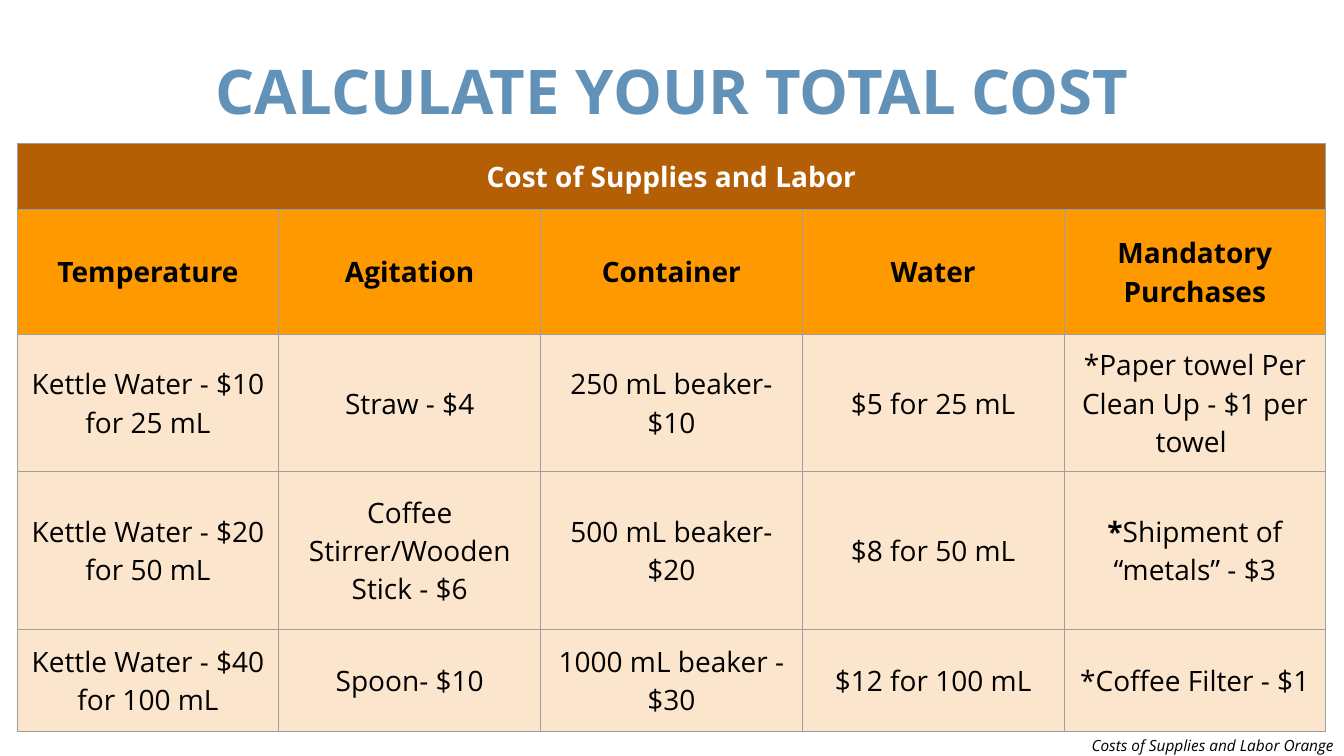
from lxml.etree import SubElement
from pptx import Presentation
from pptx.dml.color import RGBColor
from pptx.enum.shapes import MSO_SHAPE
from pptx.enum.text import MSO_ANCHOR, PP_ALIGN
from pptx.oxml.ns import qn
from pptx.util import Inches, Pt

FONT = "Open Sans"
TITLE = "CALCULATE YOUR TOTAL COST"
TABLE_HEADING = "Cost of Supplies and Labor"
CAPTION = "Costs of Supplies and Labor Orange"
HEADERS = ["Temperature", "Agitation", "Container", "Water", "Mandatory Purchases"]
COSTS = [
    ["Kettle Water - $10 for 25 mL", "Straw - $4", "250 mL beaker- $10",
     "$5 for 25 mL", "*Paper towel Per Clean Up - $1 per towel "],
    ["Kettle Water - $20 for 50 mL", "Coffee Stirrer/Wooden Stick - $6",
     "500 mL beaker- $20", "$8 for 50 mL",
     [("*", True), ("Shipment of “metals” - $3", False)]],
    ["Kettle Water - $40 for 100 mL", "Spoon- $10", "1000 mL beaker - $30",
     "$12 for 100 mL", "*Coffee Filter - $1"],
]
ROW_HEIGHTS = [0.66, 1.24, 1.36, 1.57, 1.01]
TABLE_LEFT, TABLE_TOP, TABLE_WIDTH = 0.17, 1.42, 12.98
CELL_MARGIN = Inches(0.09)
BORDER = "9E9E9E"


def color(value):
    return RGBColor.from_string(value)


def add_run(para, text, size, ink, bold=False, italic=False):
    span = para.add_run()
    span.text = text
    font = span.font
    font.name, font.size, font.bold, font.italic = FONT, Pt(size), bold, italic
    font.color.rgb = color(ink)


def add_borders(cell):
    """Draw the four edges; they must precede the fill in the cell properties."""
    properties = cell._tc.get_or_add_tcPr()
    for edge in ("a:lnL", "a:lnR", "a:lnT", "a:lnB"):
        line = SubElement(properties, qn(edge), w=str(Pt(0.75)))
        fill = SubElement(line, qn("a:solidFill"))
        SubElement(fill, qn("a:srgbClr"), val=BORDER)


def format_cell(cell, fill, content="", ink="000000", bold=False):
    add_borders(cell)
    cell.fill.solid()
    cell.fill.fore_color.rgb = color(fill)
    cell.vertical_anchor = MSO_ANCHOR.MIDDLE
    cell.margin_left = cell.margin_right = CELL_MARGIN
    cell.margin_top = cell.margin_bottom = CELL_MARGIN
    para = cell.text_frame.paragraphs[0]
    para.alignment = PP_ALIGN.CENTER
    runs = [(content, bold)] if isinstance(content, str) else content
    for text, weight in runs:
        if text:
            add_run(para, text, 20, ink, weight)


def add_title(page):
    title = page.shapes.title
    title.left, title.top = Inches(0.92), Inches(0.21)
    title.width, title.height = Inches(11.5), Inches(1.45)
    title.text_frame.vertical_anchor = MSO_ANCHOR.MIDDLE
    para = title.text_frame.paragraphs[0]
    para.alignment = PP_ALIGN.CENTER
    para.line_spacing = 0.9
    add_run(para, TITLE, 44, "6292B8", bold=True)


def add_cost_table(page):
    columns = len(HEADERS)
    table = page.shapes.add_table(
        len(ROW_HEIGHTS), columns, Inches(TABLE_LEFT), Inches(TABLE_TOP),
        Inches(TABLE_WIDTH), Inches(sum(ROW_HEIGHTS))).table
    table.first_row = table.horz_banding = False
    for column in table.columns:
        column.width = Inches(TABLE_WIDTH / columns)
    for row, height in zip(table.rows, ROW_HEIGHTS):
        row.height = Inches(height)

    table.cell(0, 0).merge(table.cell(0, columns - 1))
    for index in range(columns):
        heading = "" if index else TABLE_HEADING
        format_cell(table.cell(0, index), "B45F06", heading, "FFFFFF", True)
        format_cell(table.cell(1, index), "FF9900", HEADERS[index], bold=True)
        for row, costs in enumerate(COSTS, start=2):
            format_cell(table.cell(row, index), "FCE5CD", costs[index])


def add_caption(page):
    box = page.shapes.add_shape(MSO_SHAPE.RECTANGLE, Inches(8.78), Inches(7.29),
                                Inches(4.55), Inches(0.2))
    box.shadow.inherit = False
    box.fill.solid()
    box.fill.fore_color.rgb = color("FFFFFF")
    box.line.color.rgb = color("FFFFFF")
    box.line.width = Pt(1)
    box.text_frame.word_wrap = True
    box.text_frame.vertical_anchor = MSO_ANCHOR.MIDDLE
    para = box.text_frame.paragraphs[0]
    para.alignment = PP_ALIGN.RIGHT
    add_run(para, CAPTION, 11, "000000", italic=True)


def main():
    deck = Presentation()
    deck.slide_width, deck.slide_height = Inches(13.33), Inches(7.5)
    page = deck.slides.add_slide(deck.slide_layouts[5])
    add_title(page)
    add_cost_table(page)
    add_caption(page)
    deck.save("out.pptx")


if __name__ == "__main__":
    main()
